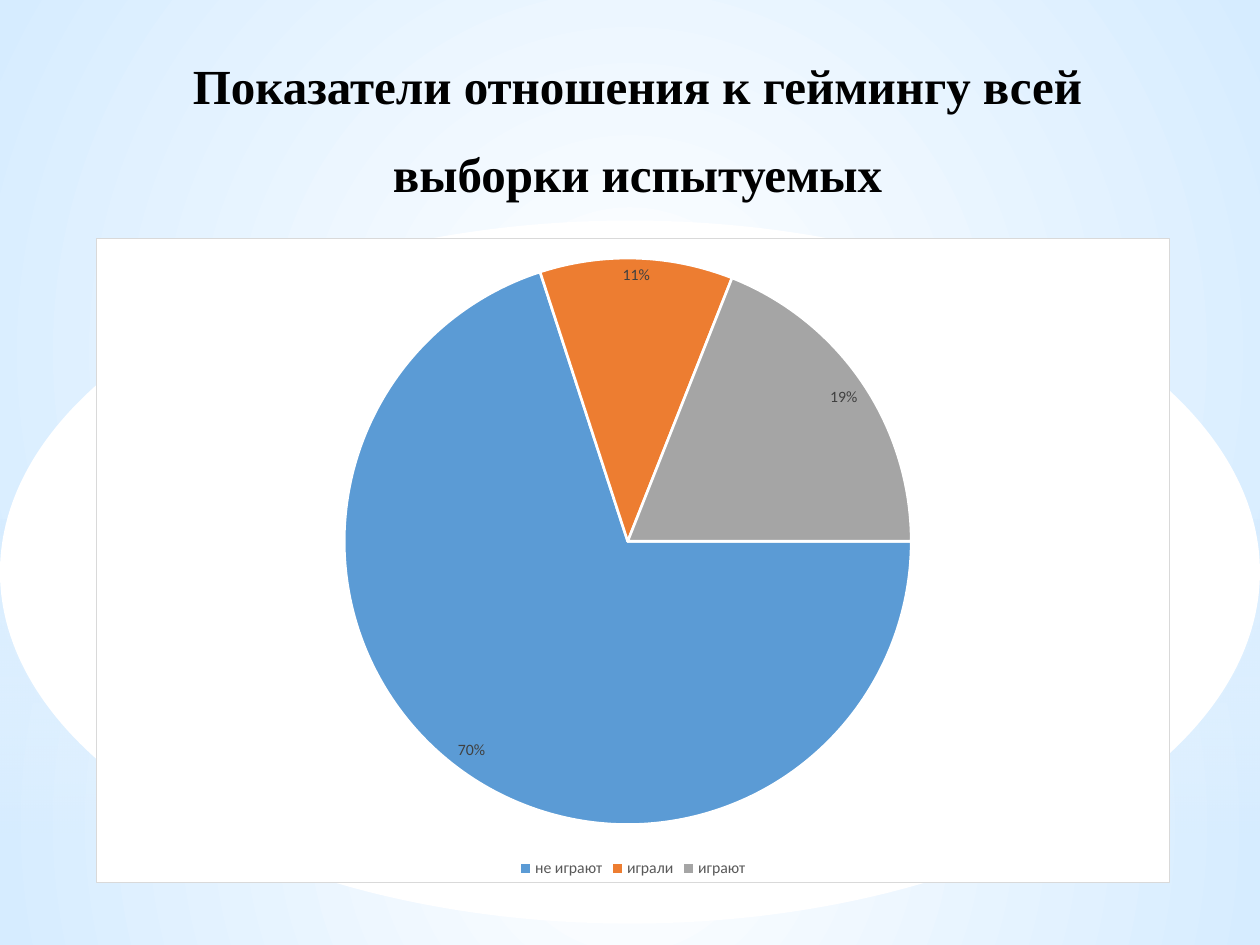
from dataclasses import dataclass
from typing import Optional

from lxml import etree
from pptx import Presentation
from pptx.chart.data import CategoryChartData
from pptx.dml.color import RGBColor
from pptx.enum import chart as ch, shapes, text
from pptx.oxml import parse_xml
from pptx.oxml.ns import nsdecls, qn
from pptx.util import Inches, Pt

COLORS = {
    "white": "FFFFFF", "pale": "D6ECFF", "sky": "C2E2FE", "blue": "79BFFF",
    "black": "000000", "border": "D9D9D9", "legend": "595959", "label": "404040",
    "never": "5B9BD5", "former": "ED7D31", "current": "A5A5A5",
}


@dataclass
class Stop:
    color: str
    opacity: int = 100


@dataclass
class Gradient:
    start: Stop
    end: Stop
    focus: Optional[tuple[int, int, int, int]] = None


@dataclass
class Panel:
    top: float
    height: float
    gradient: Optional[Gradient] = None
    kind: shapes.MSO_SHAPE = shapes.MSO_SHAPE.RECTANGLE


@dataclass
class Slice:
    name: str
    value: int
    color: str


GLOW = Gradient(Stop("white"), Stop("pale"), (50, 50, 50, 50))
BACKDROP = Gradient(Stop("sky"), Stop("blue"), (50, 10, 50, 90))
FADE = Gradient(Stop("pale", 60), Stop("white", 0))
PANELS = [
    Panel(5.58, 1.92, GLOW),
    Panel(0, 5.58, GLOW),
    Panel(4.12, 2.5, FADE),
    Panel(1.75, 5.58, kind=shapes.MSO_SHAPE.OVAL),
]
SLICES = [
    Slice("не играют", 70, "never"),
    Slice("играли", 11, "former"),
    Slice("играют", 19, "current"),
]


def rgb(name: str) -> RGBColor:
    return RGBColor.from_string(COLORS[name])


def set_gradient(fill, root, gradient: Gradient) -> None:
    fill.gradient()
    grad = root.xpath(".//a:gradFill")[0]
    for child in list(grad):
        grad.remove(child)
    stops = etree.SubElement(grad, qn("a:gsLst"))
    for pos, stop in ((0, gradient.start), (100, gradient.end)):
        gs = etree.SubElement(stops, qn("a:gs"), pos=str(pos * 1000))
        color = etree.SubElement(gs, qn("a:srgbClr"), val=COLORS[stop.color])
        if stop.opacity < 100:
            etree.SubElement(color, qn("a:alpha"), val=str(stop.opacity * 1000))
    if gradient.focus:
        radial = etree.SubElement(grad, qn("a:path"), path="circle")
        sides = {k: str(v * 1000) for k, v in zip("ltrb", gradient.focus)}
        etree.SubElement(radial, qn("a:fillToRect"), sides)
    else:
        etree.SubElement(grad, qn("a:lin"), ang="5400000", scaled="0")


def add_panel(s, panel: Panel) -> None:
    sp = s.shapes.add_shape(panel.kind, 0, Inches(panel.top), Inches(10), Inches(panel.height))
    sp.shadow.inherit = False
    sp.line.fill.background()
    if panel.gradient:
        set_gradient(sp.fill, sp._element, panel.gradient)
    else:
        sp.fill.solid()
        sp.fill.fore_color.rgb = rgb("white")


def set_font(font, name: str, size: float, color: str, bold: bool = False) -> None:
    font.name = name
    font.size = Pt(size)
    font.bold = bold
    font.color.rgb = rgb(color)


def add_title(s, title: str) -> None:
    tf = s.shapes.add_textbox(Inches(1.36), Inches(0.16), Inches(7.4), Inches(1.5)).text_frame
    tf.word_wrap = True
    p = tf.paragraphs[0]
    p.text = title
    p.alignment = text.PP_ALIGN.CENTER
    p.line_spacing = 1.5
    set_font(p.font, "Times New Roman", 28, "black", True)


def add_pie(s, slices: list[Slice]) -> None:
    data = CategoryChartData()
    data.categories = [item.name for item in slices]
    data.add_series("Series 1", [item.value for item in slices])
    chart = s.shapes.add_chart(
        ch.XL_CHART_TYPE.PIE, Inches(0.76), Inches(1.89), Inches(8.53), Inches(5.12), data
    ).chart
    chart.has_title = False
    set_font(chart.font, "Arial", 10, "black")
    chart.has_legend = True
    chart.legend.position = ch.XL_LEGEND_POSITION.BOTTOM
    chart.legend.include_in_layout = False
    set_font(chart.legend.font, "Calibri", 9, "legend")

    plot = chart.plots[0]
    plot.vary_by_categories = True
    for i, item in enumerate(slices):
        fmt = plot.series[0].points[i].format
        fmt.fill.solid()
        fmt.fill.fore_color.rgb = rgb(item.color)
        fmt.line.color.rgb = rgb("white")
        fmt.line.width = Pt(1.5)
    labels = plot.series[0].data_labels
    labels.show_percentage = True
    labels.show_value = False
    labels.number_format = "0%"
    labels.number_format_is_linked = False
    labels.position = ch.XL_LABEL_POSITION.BEST_FIT
    set_font(labels.font, "Calibri", 9, "label")

    space = chart._chartSpace
    pie = space.xpath(".//c:pieChart")[0]
    for old in pie.findall(qn("c:firstSliceAng")):
        pie.remove(old)
    etree.SubElement(pie, qn("c:firstSliceAng"), val="90")
    area = space.xpath(".//c:plotArea")[0]
    for old in area.findall(qn("c:layout")):
        area.remove(old)
    layout = etree.Element(qn("c:layout"))
    manual = etree.SubElement(layout, qn("c:manualLayout"))
    settings = {"layoutTarget": "inner", "xMode": "edge", "yMode": "edge",
                "x": "0.23", "y": "0.03", "w": "0.53", "h": "0.88"}
    for tag, value in settings.items():
        etree.SubElement(manual, qn(f"c:{tag}"), val=value)
    area.insert(0, layout)
    space.find(qn("c:chart")).addnext(parse_xml(
        f'<c:spPr {nsdecls("c", "a")}>'
        f'<a:solidFill><a:srgbClr val="{COLORS["white"]}"/></a:solidFill>'
        f'<a:ln w="{Pt(0.75)}"><a:solidFill><a:srgbClr val="{COLORS["border"]}"/>'
        '</a:solidFill></a:ln></c:spPr>'
    ))


def main() -> None:
    prs = Presentation()
    prs.slide_width, prs.slide_height = Inches(10), Inches(7.5)
    s = prs.slides.add_slide(prs.slide_layouts[6])
    set_gradient(s.background.fill, s._element, BACKDROP)
    for panel in PANELS:
        add_panel(s, panel)
    add_title(s, "Показатели отношения к геймингу всей выборки испытуемых")
    add_pie(s, SLICES)
    prs.save("out.pptx")


if __name__ == "__main__":
    main()
